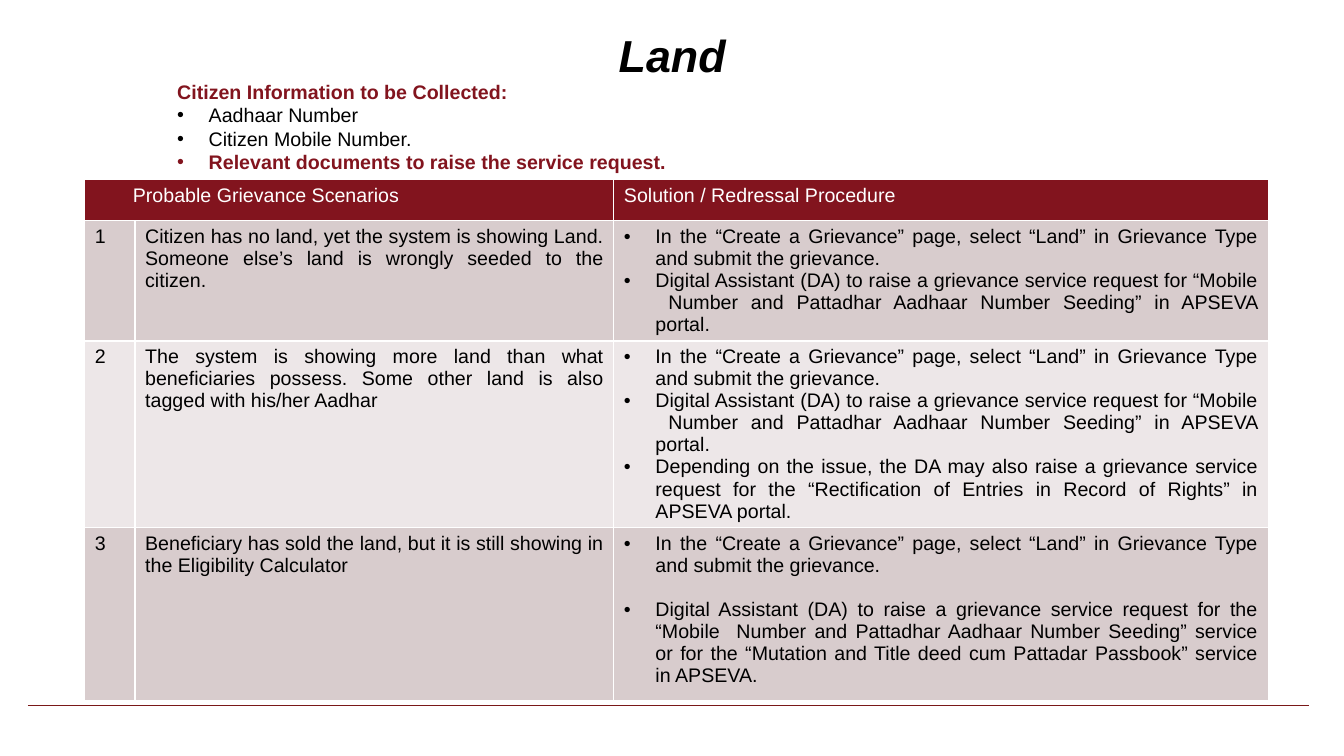
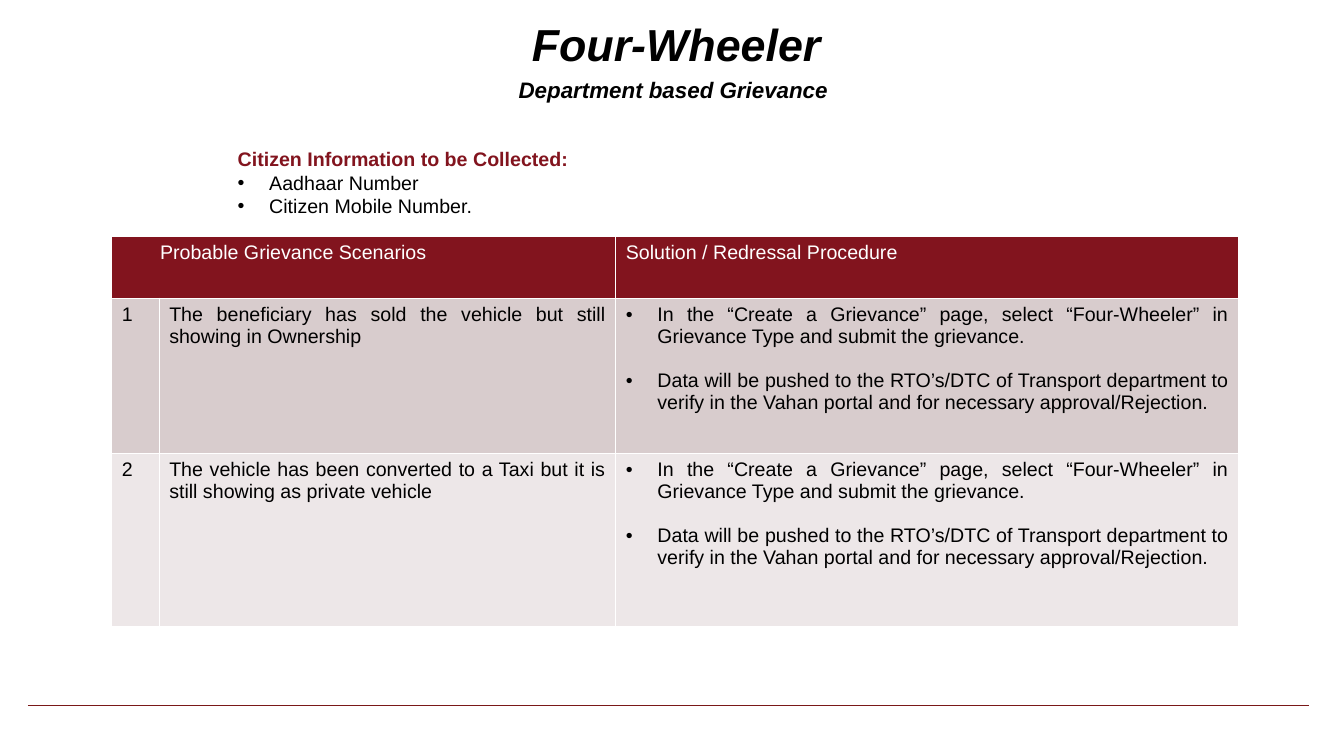
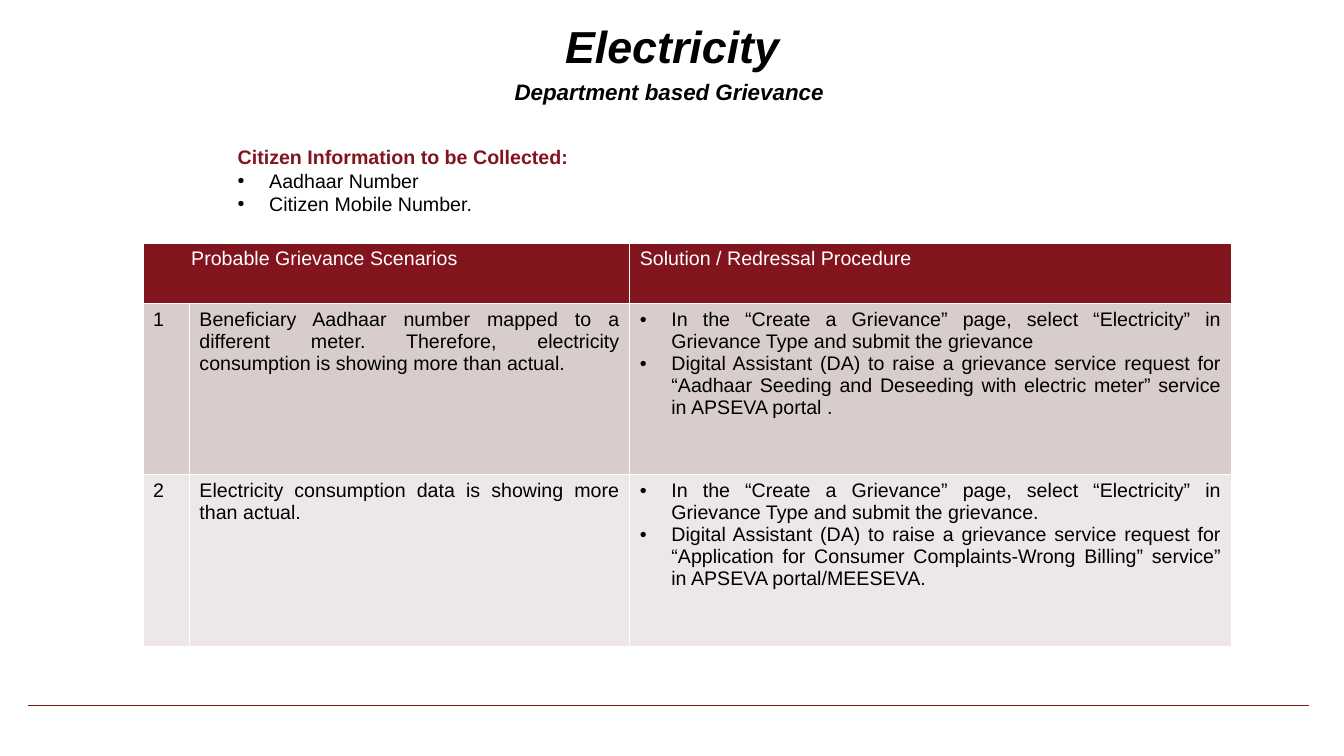
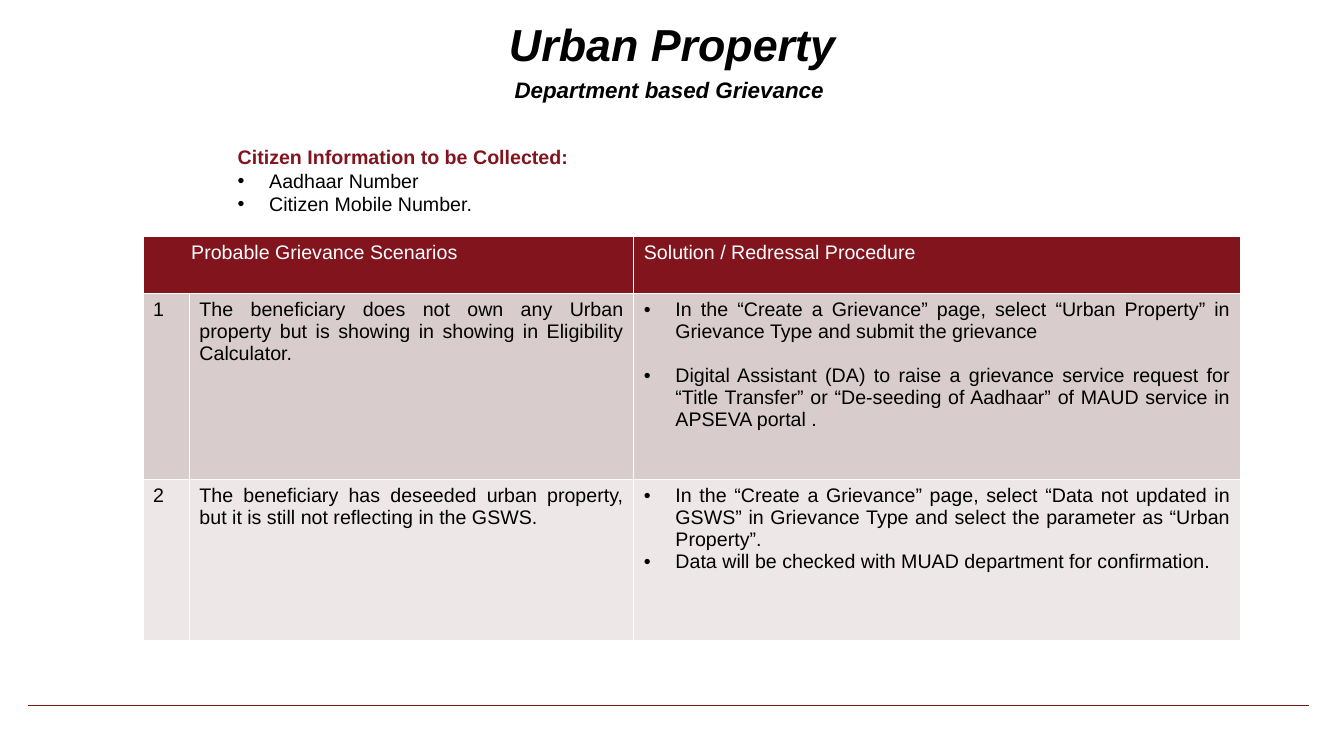
from dataclasses import dataclass

from lxml import etree
from pptx import Presentation
from pptx.dml.color import RGBColor
from pptx.enum import shapes, text
from pptx.oxml import ns
from pptx.util import Pt


@dataclass(frozen=True)
class Theme:
    font: str = "Arial"
    maroon: RGBColor = RGBColor(0x82, 0x14, 0x1E)
    rule: RGBColor = RGBColor(0x7A, 0x18, 0x18)
    black: RGBColor = RGBColor(0, 0, 0)
    white: RGBColor = RGBColor(255, 255, 255)
    bands: tuple = (RGBColor(0xD8, 0xCC, 0xCD), RGBColor(0xED, 0xE7, 0xE8))
    title_size: int = 32
    subtitle_size: int = 16
    body_size: int = 14
    title_line: int = 23
    body_line: float = 15.7
    bullet_indent: float = 22.5
    header_indent: float = 34.4


@dataclass(frozen=True)
class Scenario:
    problem: str
    steps: tuple
    spaced: bool = False  # a free line between the steps


@dataclass(frozen=True)
class Topic:
    title: str
    title_box: tuple
    info_box: tuple
    table_at: tuple
    columns: tuple
    rows: tuple
    scenarios: tuple
    subtitle: str = "Department based Grievance "
    extra_info: str = ""


THEME = Theme()
INFO_HEADING = "Citizen Information to be Collected:"
INFO_ITEMS = ("Aadhaar Number", "Citizen Mobile Number.")
HEADERS = ("Probable Grievance Scenarios", "Solution / Redressal Procedure")


def create_step(kind, end="."):
    return (f"In the “Create a Grievance” page, select “{kind}” in Grievance Type "
            f"and submit the grievance{end}")


def assistant_step(request):
    return f"Digital Assistant (DA) to raise a grievance service request for {request}"


SEEDING = "“Mobile  Number and Pattadhar Aadhaar Number Seeding”"
TRANSPORT_STEPS = (
    create_step("Four-Wheeler"),
    "Data will be pushed to the RTO’s/DTC of Transport department to verify in the "
    "Vahan portal and for necessary approval/Rejection.",
)

TOPICS = (
    Topic(
        title="Land",
        subtitle="",
        title_box=(157.7, 23, 645, 58.3),
        info_box=(119.5, 53.3, 612, 75),
        extra_info="Relevant documents to raise the service request.",
        table_at=(60.5, 128.2),
        columns=(36, 342, 467.5),
        rows=(29.5, 80.6, 123.8, 123.8),
        scenarios=(
            Scenario(
                "Citizen has no land, yet the system is showing Land. Someone else’s "
                "land is wrongly seeded to the citizen.",
                (create_step("Land"), assistant_step(f"{SEEDING} in APSEVA portal."))),
            Scenario(
                "The system is showing more land than what beneficiaries possess. "
                "Some other land is also tagged with his/her Aadhar",
                (create_step("Land"),
                 assistant_step(f"{SEEDING} in APSEVA portal."),
                 "Depending on the issue, the DA may also raise a grievance service "
                 "request for the “Rectification of Entries in Record of Rights” in "
                 "APSEVA portal.")),
            Scenario(
                "Beneficiary has sold the land, but it is still showing in the "
                "Eligibility Calculator",
                (create_step("Land"),
                 assistant_step(f"the {SEEDING} service or for the “Mutation and Title "
                                "deed cum Pattadar Passbook” service in APSEVA.")),
                spaced=True),
        ),
    ),
    Topic(
        title="Four-Wheeler",
        title_box=(160.6, 27.4, 645, 46),
        info_box=(162.7, 101.5, 639.4, 58.3),
        table_at=(79.9, 169.2),
        columns=(33.8, 326.2, 445),
        rows=(43.9, 110.9, 123.8),
        scenarios=(
            Scenario("The beneficiary has sold the vehicle but still showing in Ownership",
                     TRANSPORT_STEPS, spaced=True),
            Scenario("The vehicle has been converted to a Taxi but it is still showing "
                     "as private vehicle", TRANSPORT_STEPS, spaced=True),
        ),
    ),
    Topic(
        title="Electricity",
        title_box=(157.7, 28.8, 645, 46),
        info_box=(162.7, 100.1, 639.4, 58.3),
        table_at=(102.2, 173.5),
        columns=(33.1, 314.6, 429.8),
        rows=(43.2, 122.4, 122.4),
        scenarios=(
            Scenario(
                "Beneficiary Aadhaar number mapped to a different meter. Therefore, "
                "electricity consumption is showing more than actual.",
                (create_step("Electricity", end=""),
                 assistant_step("“Aadhaar Seeding and Deseeding with electric meter” "
                                "service in APSEVA portal ."))),
            Scenario(
                "Electricity consumption data is showing more than actual.",
                (create_step("Electricity"),
                 assistant_step("“Application for Consumer Complaints-Wrong Billing” "
                                "service” in APSEVA portal/MEESEVA."))),
        ),
    ),
    Topic(
        title="Urban Property",
        title_box=(157.7, 27.4, 645, 46),
        info_box=(162.7, 100.1, 639.4, 58.3),
        table_at=(102.2, 169.2),
        columns=(33.1, 317.5, 433.4),
        rows=(40.3, 133.2, 115.2),
        scenarios=(
            Scenario(
                "The beneficiary does not own any Urban property but is showing in "
                "showing in Eligibility Calculator.",
                (create_step("Urban Property", end=""),
                 assistant_step("“Title Transfer” or “De-seeding of Aadhaar” of MAUD "
                                "service in APSEVA portal .")),
                spaced=True),
            Scenario(
                "The beneficiary has deseeded urban property, but it is still not "
                "reflecting in the GSWS.",
                ("In the “Create a Grievance” page, select “Data not updated in GSWS” in "
                 "Grievance Type and select the parameter as “Urban Property”.",
                 "Data will be checked with MUAD department for confirmation.")),
        ),
    ),
)


def style_font(font, size, color, bold=False, italic=False):
    font.name = THEME.font
    font.size = Pt(size)
    font.color.rgb = color
    font.bold = bold
    font.italic = italic


def add_bullet(paragraph):
    properties = paragraph._p.get_or_add_pPr()
    properties.set("marL", str(Pt(THEME.bullet_indent)))
    properties.set("indent", str(-Pt(THEME.bullet_indent)))
    etree.SubElement(properties, ns.qn("a:buFont"), typeface=THEME.font)
    etree.SubElement(properties, ns.qn("a:buChar"), char="•")


def style_runs(paragraph, color, bold=False):
    for run in paragraph.runs:
        style_font(run.font, THEME.body_size, color, bold)


def add_title(slide, topic):
    title = slide.shapes.title
    title.left, title.top, title.width, title.height = map(Pt, topic.title_box)
    frame = title.text_frame
    frame.auto_size = text.MSO_AUTO_SIZE.NONE
    frame.word_wrap = True
    frame.vertical_anchor = text.MSO_ANCHOR.BOTTOM
    frame.margin_left = frame.margin_top = frame.margin_right = 0
    # A title on its own keeps the subtitle's line free below it.
    frame.margin_bottom = 0 if topic.subtitle else Pt(THEME.title_line)
    frame.text = "\v".join(filter(None, (topic.title, topic.subtitle)))
    paragraph = frame.paragraphs[0]
    paragraph.alignment = text.PP_ALIGN.CENTER
    paragraph.line_spacing = Pt(THEME.title_line)
    for run, size in zip(paragraph.runs, (THEME.title_size, THEME.subtitle_size)):
        style_font(run.font, size, THEME.black, bold=True, italic=True)


def add_info(slide, topic):
    """List what to collect from the citizen."""
    frame = slide.shapes.add_textbox(*map(Pt, topic.info_box)).text_frame
    frame.word_wrap = True
    lines = [INFO_HEADING, *INFO_ITEMS]
    if topic.extra_info:
        lines.append(topic.extra_info)
    frame.text = "\n".join(lines)
    for line, paragraph in zip(lines, frame.paragraphs):
        plain = line in INFO_ITEMS
        if line != INFO_HEADING:
            add_bullet(paragraph)
        style_runs(paragraph, THEME.black if plain else THEME.maroon, bold=not plain)


def fill_cell(cell, content, fill, color):
    cell.fill.solid()
    cell.fill.fore_color.rgb = fill
    cell.text_frame.text = content
    for paragraph in cell.text_frame.paragraphs:
        style_runs(paragraph, color)


def add_scenario_row(table, number, scenario):
    band = THEME.bands[(number - 1) % len(THEME.bands)]
    contents = (str(number), scenario.problem, "\n".join(scenario.steps))
    for column, content in enumerate(contents):
        cell = table.cell(number, column)
        fill_cell(cell, content, band, THEME.black)
        for paragraph in cell.text_frame.paragraphs:
            paragraph.alignment = text.PP_ALIGN.JUSTIFY
    steps = table.cell(number, 2).text_frame.paragraphs
    for index, paragraph in enumerate(steps):
        if scenario.spaced and index:
            paragraph.space_before = Pt(THEME.body_line)
        add_bullet(paragraph)


def add_grievance_table(slide, topic):
    frame = slide.shapes.add_table(
        len(topic.rows), len(topic.columns), *map(Pt, topic.table_at),
        Pt(sum(topic.columns)), Pt(sum(topic.rows)))
    table = frame.table
    for column, width in zip(table.columns, topic.columns):
        column.width = Pt(width)
    for row, height in zip(table.rows, topic.rows):
        row.height = Pt(height)
    table.cell(0, 0).merge(table.cell(0, 1))
    for column, header in zip((0, 2), HEADERS):
        fill_cell(table.cell(0, column), header, THEME.maroon, THEME.white)
    table.cell(0, 0).margin_left = Pt(THEME.header_indent)
    for number, scenario in enumerate(topic.scenarios, start=1):
        add_scenario_row(table, number, scenario)


def add_footer_rule(slide):
    rule = slide.shapes.add_connector(
        shapes.MSO_CONNECTOR.STRAIGHT, Pt(20), Pt(504), Pt(935), Pt(504))
    rule.line.color.rgb = THEME.rule
    rule.line.width = Pt(0.75)
    etree.SubElement(rule._element.spPr, ns.qn("a:effectLst"))


def add_topic_slide(presentation, topic):
    slide = presentation.slides.add_slide(presentation.slide_layouts[5])
    add_footer_rule(slide)
    add_title(slide, topic)
    add_grievance_table(slide, topic)
    add_info(slide, topic)


def main():
    presentation = Presentation()
    presentation.slide_width = Pt(960)
    presentation.slide_height = Pt(540)
    for topic in TOPICS:
        add_topic_slide(presentation, topic)
    presentation.save("out.pptx")


if __name__ == "__main__":
    main()
